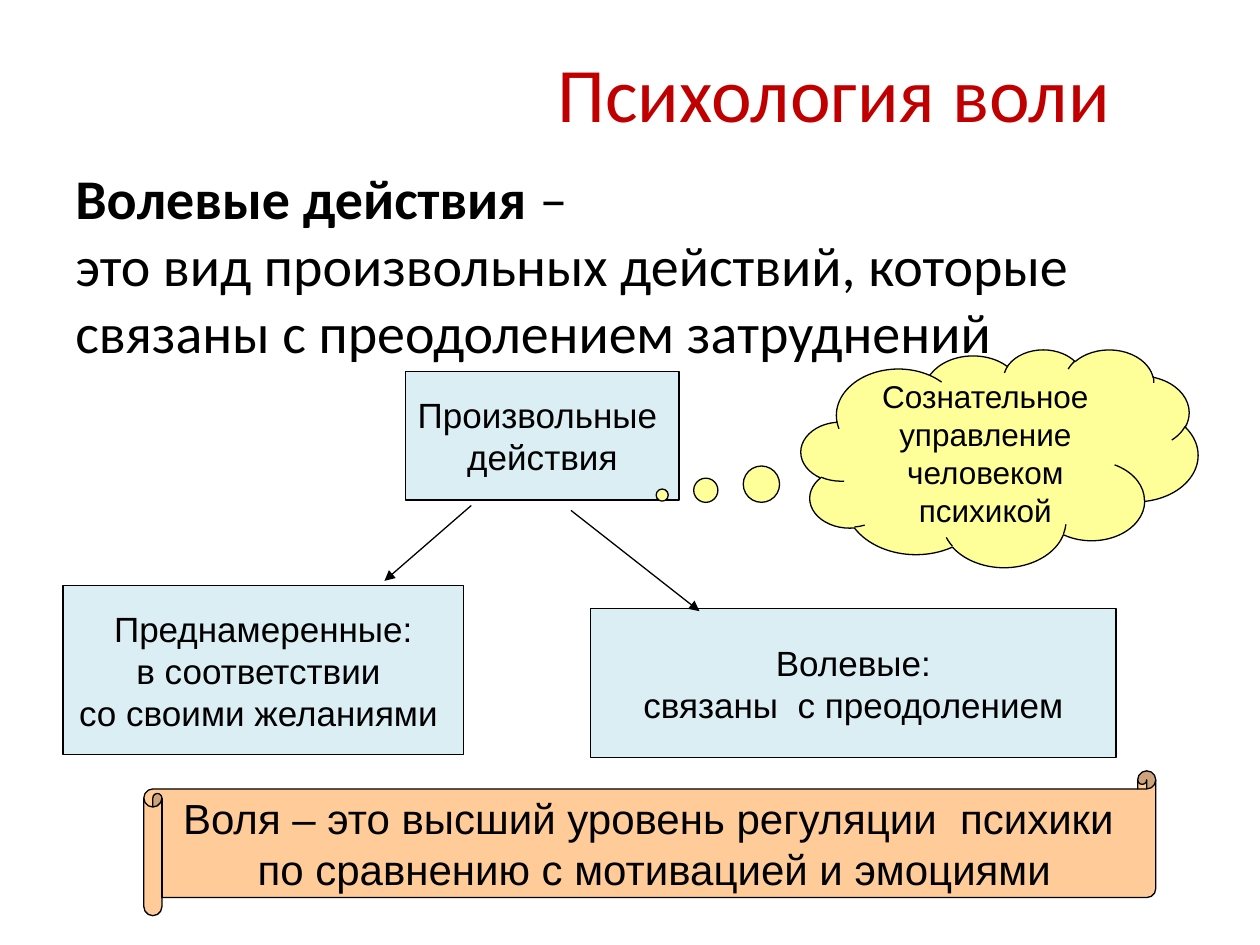
from dataclasses import dataclass

from lxml import etree
from pptx import Presentation
from pptx.dml.color import RGBColor
from pptx.enum import shapes, text
from pptx.oxml import ns
from pptx.util import Cm, Pt


@dataclass(frozen=True)
class Theme:
    heading_font: str = "Calibri"
    label_font: str = "Arial"
    black: RGBColor = RGBColor(0, 0, 0)
    red: RGBColor = RGBColor(0xC0, 0, 0)
    blue: RGBColor = RGBColor(0xDB, 0xEE, 0xF4)
    yellow: RGBColor = RGBColor(0xFF, 0xFF, 0x99)
    orange: RGBColor = RGBColor(0xFF, 0xCC, 0x99)
    title_size: Pt = Pt(44)
    body_size: Pt = Pt(32)
    scroll_size: Pt = Pt(24)
    label_size: Pt = Pt(20)
    cloud_size: Pt = Pt(18)
    line_width: Pt = Pt(0.75)


THEME = Theme()
KIND = shapes.MSO_SHAPE


@dataclass(frozen=True)
class Box:
    """A rectangle in centimetres."""
    left: float
    top: float
    width: float
    height: float

    def inner(self, left, top, width, height):
        return Box(self.left + left, self.top + top, width, height)

    def lengths(self):
        return [Cm(n) for n in (self.left, self.top, self.width, self.height)]


def write(shape, lines, font, size, color=THEME.black, wrap=True,
          align=text.PP_ALIGN.CENTER, anchor=text.MSO_ANCHOR.MIDDLE):
    """Fill a shape with paragraphs; each line is a list of (words, bold) spans."""
    frame = shape.text_frame
    frame.word_wrap = wrap
    frame.vertical_anchor = anchor
    for index, spans in enumerate(lines):
        para = frame.paragraphs[0] if index == 0 else frame.add_paragraph()
        para.alignment = align
        para.font.name, para.font.size = font, size
        para.font.color.rgb = color
        for words, bold in spans:
            span = para.add_run()
            span.text = words
            if bold:
                span.font.bold = True


def add_label(page, kind, box, lines, fill, size, wrap=False, adjustments=()):
    shape = page.shapes.add_shape(kind, *box.lengths())
    for index, value in enumerate(adjustments):
        shape.adjustments[index] = value
    shape.shadow.inherit = False
    shape.fill.solid()
    shape.fill.fore_color.rgb = fill
    shape.line.color.rgb = THEME.black
    shape.line.width = THEME.line_width
    write(shape, [[(line, False)] for line in lines], THEME.label_font, size, wrap=wrap)


def add_arrow(page, box, start, end):
    points = [Cm(n) for x, y in (start, end) for n in (box.left + x, box.top + y)]
    arrow = page.shapes.add_connector(shapes.MSO_CONNECTOR.STRAIGHT, *points)
    arrow.line.color.rgb = THEME.black
    arrow.line.width = THEME.line_width
    etree.SubElement(arrow.line._get_or_add_ln(), ns.qn("a:tailEnd"), type="triangle")
    etree.SubElement(arrow._element.spPr, ns.qn("a:effectLst"))


def add_title(page, box):
    title = page.shapes.add_textbox(*box.lengths())
    write(title, [[("Психология воли", False)]], THEME.heading_font,
          THEME.title_size, THEME.red)


def add_definition(page, box):
    body = page.shapes.add_textbox(*box.lengths())
    lines = [
        [("Волевые действия", True), (" –", False)],
        [("это вид произвольных действий, которые", False)],
        [("связаны с преодолением затруднений", False)],
    ]
    write(body, lines, THEME.heading_font, THEME.body_size,
          align=text.PP_ALIGN.LEFT, anchor=text.MSO_ANCHOR.TOP)


def add_action_diagram(page, box):
    """Place the kinds of action, the thought cloud and the arrows."""
    actions = [
        ((6.91, 0.45, 5.51, 2.59), ["Произвольные ", "действия"]),
        ((0, 4.77, 8.08, 3.4),
         ["Преднамеренные:", "в соответствии ", "со своими желаниями "]),
        ((10.64, 5.23, 10.59, 3), ["Волевые:", "связаны  с преодолением"]),
    ]
    for place, lines in actions:
        add_label(page, KIND.RECTANGLE, box.inner(*place), lines,
                  THEME.blue, THEME.label_size)
    add_label(page, KIND.CLOUD_CALLOUT, box.inner(14.88, 0, 8, 4.39),
              ["Сознательное управление человеком психикой"],
              THEME.yellow, THEME.cloud_size, wrap=True, adjustments=(-0.85, 0.17))
    add_arrow(page, box, (8.23, 3.15), (6.48, 4.67))
    add_arrow(page, box, (10.24, 3.25), (12.83, 5.28))


def add_conclusion(page, box):
    add_label(page, KIND.HORIZONTAL_SCROLL, box,
              ["Воля – это высший уровень регуляции  психики ",
               "по сравнению с мотивацией и эмоциями"],
              THEME.orange, THEME.scroll_size)


def main():
    deck = Presentation()
    deck.slide_width, deck.slide_height = Cm(25.4), Cm(19.05)
    page = deck.slides.add_slide(deck.slide_layouts[6])
    add_title(page, Box(9.5, 0.76, 14.63, 2.16))
    add_definition(page, Box(1.27, 3.17, 22.86, 4.27))
    add_action_diagram(page, Box(1.27, 7.04, 22.88, 8.23))
    add_conclusion(page, Box(2.9, 15.54, 20.4, 2.92))
    deck.save("out.pptx")


if __name__ == "__main__":
    main()
